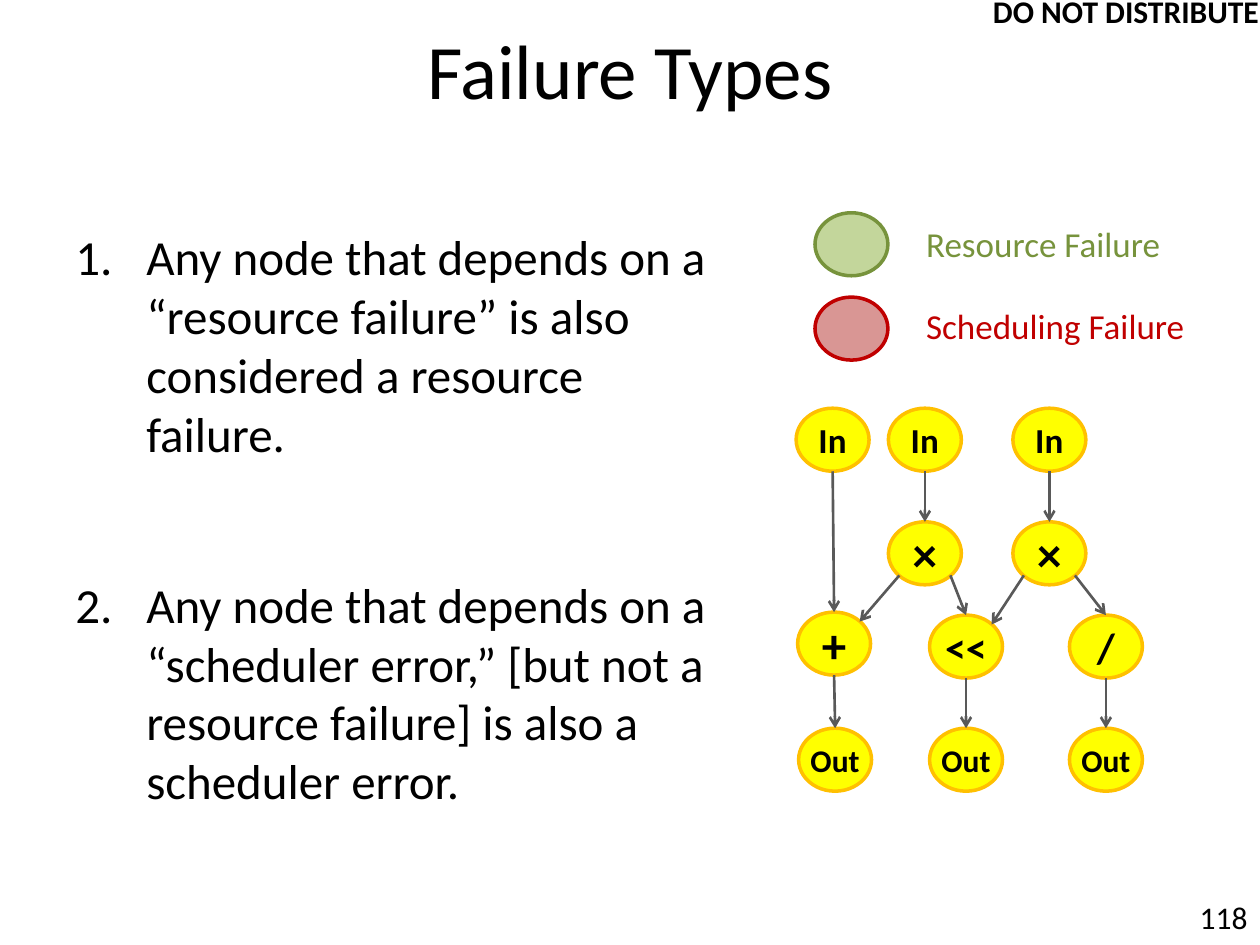
from pptx import Presentation
from pptx.dml.color import RGBColor
from pptx.enum.shapes import MSO_CONNECTOR, MSO_SHAPE
from pptx.enum.text import MSO_ANCHOR, PP_ALIGN
from pptx.oxml.ns import qn
from pptx.util import Cm, Pt
from lxml import etree

OVAL = MSO_SHAPE.OVAL
STRAIGHT = MSO_CONNECTOR.STRAIGHT
TOP, MIDDLE = MSO_ANCHOR.TOP, MSO_ANCHOR.MIDDLE
LEFT, CENTER, RIGHT = PP_ALIGN.LEFT, PP_ALIGN.CENTER, PP_ALIGN.RIGHT

FONT = "Calibri"
COLORS = {
    "text": "000000",
    "node_fill": "FFFF00",
    "node_line": "FFC000",
    "arrow": "595959",
    "resource_fill": "C3D69B",
    "resource": "77933C",
    "scheduling_fill": "D99694",
    "scheduling": "C00000",
}

NODE_WIDTH, NODE_HEIGHT = 1.47, 1.27
DIAGONAL = 0.15
SIDES = {
    "top": (0.5, 0),
    "bottom": (0.5, 1),
    "top_right": (1 - DIAGONAL, DIAGONAL),
    "bottom_left": (DIAGONAL, 1 - DIAGONAL),
    "bottom_right": (1 - DIAGONAL, 1 - DIAGONAL),
}

NODES = {
    "in_left": (16.05, 8.23, "In", 20),
    "in_middle": (17.91, 8.23, "In", 20),
    "in_right": (20.42, 8.23, "In", 20),
    "times_left": (17.91, 10.52, "×", 28),
    "times_right": (20.42, 10.52, "×", 28),
    "plus": (16.08, 12.34, "+", 28),
    "shift": (18.74, 12.4, "<<", 24),
    "divide": (21.56, 12.4, "/", 24),
    "out_left": (16.1, 14.68, "Out", 18),
    "out_middle": (18.74, 14.68, "Out", 18),
    "out_right": (21.56, 14.68, "Out", 18),
}

EDGES = [
    ("in_left", "bottom", "plus", "top"),
    ("in_middle", "bottom", "times_left", "top"),
    ("in_right", "bottom", "times_right", "top"),
    ("times_left", "bottom_left", "plus", "top_right"),
    ("times_left", "bottom_right", "shift", "top"),
    ("times_right", "bottom_left", "shift", "top_right"),
    ("times_right", "bottom_right", "divide", "top"),
    ("plus", "bottom", "out_left", "top"),
    ("shift", "bottom", "out_middle", "top"),
    ("divide", "bottom", "out_right", "top"),
]

LEGEND = [
    ("Resource Failure", "resource", 4.29, 4.37, 5.28),
    ("Scheduling Failure", "scheduling", 5.99, 6.02, 5.77),
]

RULES = [
    "Any node that depends on a “resource failure” is also considered a resource failure.",
    "Any node that depends on a “scheduler error,” [but not a resource failure] "
    "is also a scheduler error.",
]


def color(name):
    return RGBColor.from_string(COLORS[name])


def style_paragraph(paragraph, size, color_name="text", bold=False, align=LEFT):
    paragraph.alignment = align
    paragraph.font.name = FONT
    paragraph.font.size = Pt(size)
    paragraph.font.bold = bold
    paragraph.font.color.rgb = color(color_name)


def add_text(slide, box, text, size, color_name="text", bold=False,
             align=LEFT, anchor=TOP, wrap=True):
    frame = slide.shapes.add_textbox(*map(Cm, box)).text_frame
    frame.word_wrap = wrap
    frame.vertical_anchor = anchor
    paragraph = frame.paragraphs[0]
    paragraph.text = text
    style_paragraph(paragraph, size, color_name, bold, align)


def add_oval(slide, left, top, fill_name, line_name):
    shape = slide.shapes.add_shape(
        OVAL, Cm(left), Cm(top), Cm(NODE_WIDTH), Cm(NODE_HEIGHT))
    shape.shadow.inherit = False
    shape.fill.solid()
    shape.fill.fore_color.rgb = color(fill_name)
    shape.line.color.rgb = color(line_name)
    shape.line.width = Pt(2)
    return shape


def add_node(slide, left, top, label, size):
    frame = add_oval(slide, left, top, "node_fill", "node_line").text_frame
    frame.word_wrap = False
    frame.vertical_anchor = MIDDLE
    paragraph = frame.paragraphs[0]
    paragraph.text = label
    style_paragraph(paragraph, size, bold=True, align=CENTER)


def node_point(name, side):
    left, top = NODES[name][:2]
    across, down = SIDES[side]
    return Cm(left + across * NODE_WIDTH), Cm(top + down * NODE_HEIGHT)


def add_arrow(slide, start, end):
    connector = slide.shapes.add_connector(STRAIGHT, *start, *end)
    connector.line.color.rgb = color("arrow")
    connector.line.width = Pt(1.5)
    properties = connector._element.spPr
    etree.SubElement(properties.find(qn("a:ln")), qn("a:tailEnd"), type="arrow")
    etree.SubElement(properties, qn("a:effectLst"))


def add_numbered_list(slide, box, items, size, gap):
    frame = slide.shapes.add_textbox(*map(Cm, box)).text_frame
    frame.word_wrap = True
    indent = Cm(1.43)
    for index, item in enumerate(items):
        paragraph = frame.add_paragraph() if index else frame.paragraphs[0]
        paragraph.text = item
        properties = paragraph._p.get_or_add_pPr()
        properties.set("marL", str(indent))
        properties.set("indent", str(-indent))
        etree.SubElement(properties, qn("a:buFont"), typeface="+mj-lt")
        etree.SubElement(properties, qn("a:buAutoNum"), type="arabicPeriod")
        style_paragraph(paragraph, size)
        if index:
            paragraph.space_before = Pt(gap)


def main():
    presentation = Presentation()
    presentation.slide_width, presentation.slide_height = Cm(25.4), Cm(19.05)
    slide = presentation.slides.add_slide(presentation.slide_layouts[6])

    add_text(slide, (19.89, 17.98, 5.51, 1.07), "118", 18, align=RIGHT)
    add_text(slide, (15.47, -0.28, 10.16, 1.02), "DO NOT DISTRIBUTE", 18,
             bold=True, align=RIGHT)
    add_text(slide, (1.27, -0.2, 22.86, 3.18), "Failure Types", 44,
             align=CENTER, anchor=MIDDLE)
    add_numbered_list(slide, (1.27, 4.45, 13.21, 13.11), RULES, 28, 64)

    for node in NODES.values():
        add_node(slide, *node)
    for source, source_side, target, target_side in EDGES:
        add_arrow(slide, node_point(source, source_side),
                  node_point(target, target_side))

    for label, kind, oval_top, label_top, label_width in LEGEND:
        add_oval(slide, 16.43, oval_top, f"{kind}_fill", kind)
        add_text(slide, (18.42, label_top, label_width, 1.12), label, 20, kind,
                 wrap=False)

    presentation.save("out.pptx")


if __name__ == "__main__":
    main()
